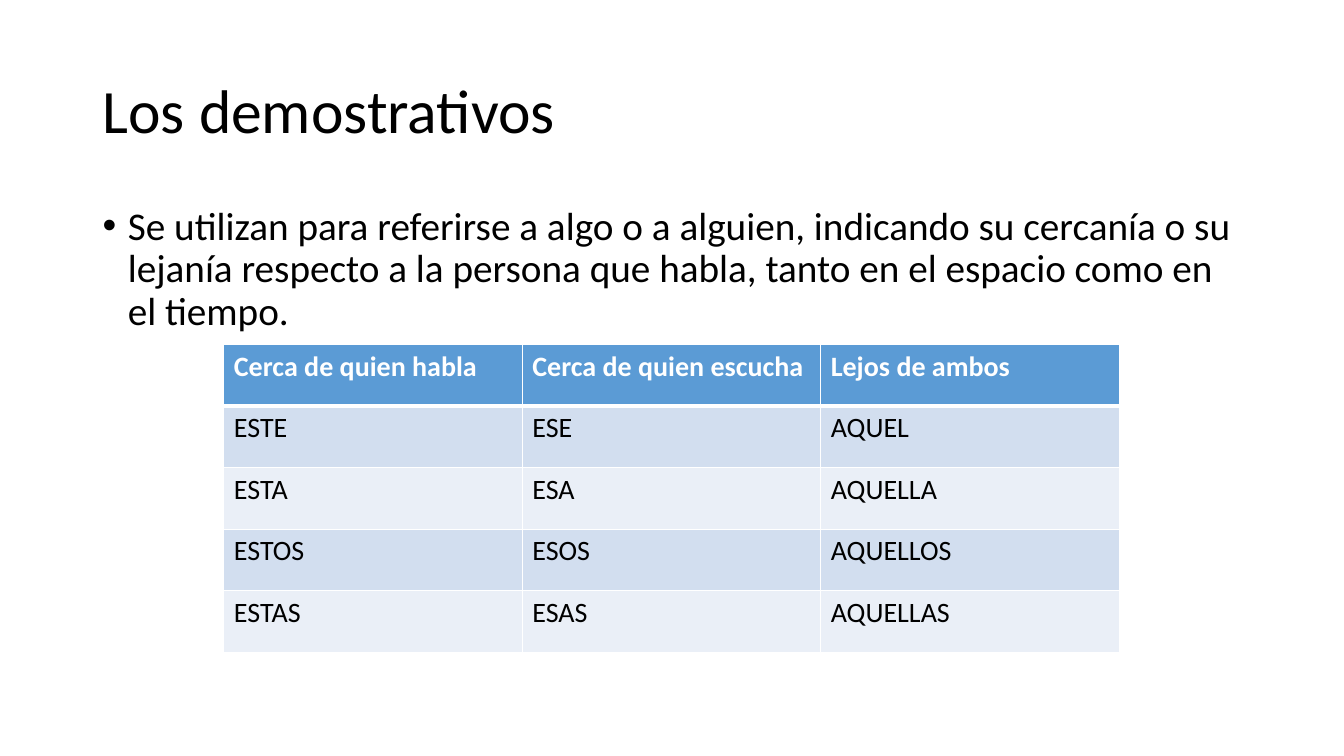
import pptx
import pptx.dml.color
import pptx.enum.text
import pptx.oxml
import pptx.oxml.ns
import pptx.util

TITLE = "Los demostrativos"
DEFINITION = (
    "Se utilizan para referirse a algo o a alguien, indicando su cercanía o su "
    "lejanía respecto a la persona que habla, tanto en el espacio como en el tiempo."
)
DEMONSTRATIVES = [
    ("Cerca de quien habla", "Cerca de quien escucha", "Lejos de ambos"),
    ("ESTE", "ESE", "AQUEL"),
    ("ESTA", "ESA", "AQUELLA"),
    ("ESTOS", "ESOS", "AQUELLOS"),
    ("ESTAS", "ESAS", "AQUELLAS"),
]

FONT = "Calibri"
BLACK, WHITE = "000000", "FFFFFF"
HEADER_FILL = "5B9BD5"
BAND_FILLS = ("EAEFF7", "D2DEEF")

EMU_PER_PX = 9144  # 100 px to the inch
PAGE_SIZE = (1333, 750)
TITLE_AREA = (92, 40, 1150, 145)
BODY_AREA = (92, 200, 1150, 476)
TABLE_LEFT, TABLE_TOP = 222, 342
COLUMN_WIDTH, ROW_HEIGHT = 296, 61
BULLET_INDENT = 25


def px(*lengths):
    return [pptx.util.Emu(length * EMU_PER_PX) for length in lengths]


def color(hex_string):
    return pptx.dml.color.RGBColor.from_string(hex_string)


def add_span(para, text, size, hex_string=BLACK, bold=False):
    span = para.add_run()
    span.text = text
    span.font.name = FONT
    span.font.size = pptx.util.Pt(size)
    span.font.bold = bold
    span.font.color.rgb = color(hex_string)


def add_text(page, area, text, size, anchor):
    box = page.shapes.add_textbox(*px(*area))
    box.text_frame.word_wrap = True
    box.text_frame.vertical_anchor = anchor
    para = box.text_frame.paragraphs[0]
    para.line_spacing = 0.9
    add_span(para, text, size)
    return para


def add_bullet(para):
    indent = px(BULLET_INDENT)[0]
    properties = para._p.get_or_add_pPr()
    properties.set("marL", str(indent))
    properties.set("indent", str(-indent))
    namespace = pptx.oxml.ns.nsdecls("a")
    for markup in (f'<a:buFont {namespace} typeface="Arial"/>',
                   f'<a:buChar {namespace} char="•"/>'):
        properties.append(pptx.oxml.parse_xml(markup))


def set_borders(cell, widths):
    """Draw white borders; widths maps a side (L, R, T, B) to points."""
    for side, width in widths.items():
        cell._tc.get_or_add_tcPr().append(pptx.oxml.parse_xml(
            f'<a:ln{side} {pptx.oxml.ns.nsdecls("a")} w="{pptx.util.Pt(width)}">'
            f'<a:solidFill><a:srgbClr val="{WHITE}"/></a:solidFill></a:ln{side}>'
        ))


def add_demonstratives(page):
    rows, columns = len(DEMONSTRATIVES), len(DEMONSTRATIVES[0])
    area = px(TABLE_LEFT, TABLE_TOP, columns * COLUMN_WIDTH, rows * ROW_HEIGHT)
    table = page.shapes.add_table(rows, columns, *area).table
    for row, words in enumerate(DEMONSTRATIVES):
        header = row == 0
        for column, word in enumerate(words):
            cell = table.cell(row, column)
            set_borders(cell, {"L": 1, "R": 1, "T": 3 if row == 1 else 1,
                               "B": 3 if header else 1})
            cell.fill.solid()
            cell.fill.fore_color.rgb = color(HEADER_FILL if header else BAND_FILLS[row % 2])
            add_span(cell.text_frame.paragraphs[0], word, 20,
                     WHITE if header else BLACK, header)


def main():
    deck = pptx.Presentation()
    deck.slide_width, deck.slide_height = px(*PAGE_SIZE)
    page = deck.slides.add_slide(deck.slide_layouts[6])
    anchors = pptx.enum.text.MSO_ANCHOR
    add_text(page, TITLE_AREA, TITLE, 44, anchors.MIDDLE)
    add_bullet(add_text(page, BODY_AREA, DEFINITION, 28, anchors.TOP))
    add_demonstratives(page)
    deck.save("out.pptx")


if __name__ == "__main__":
    main()
